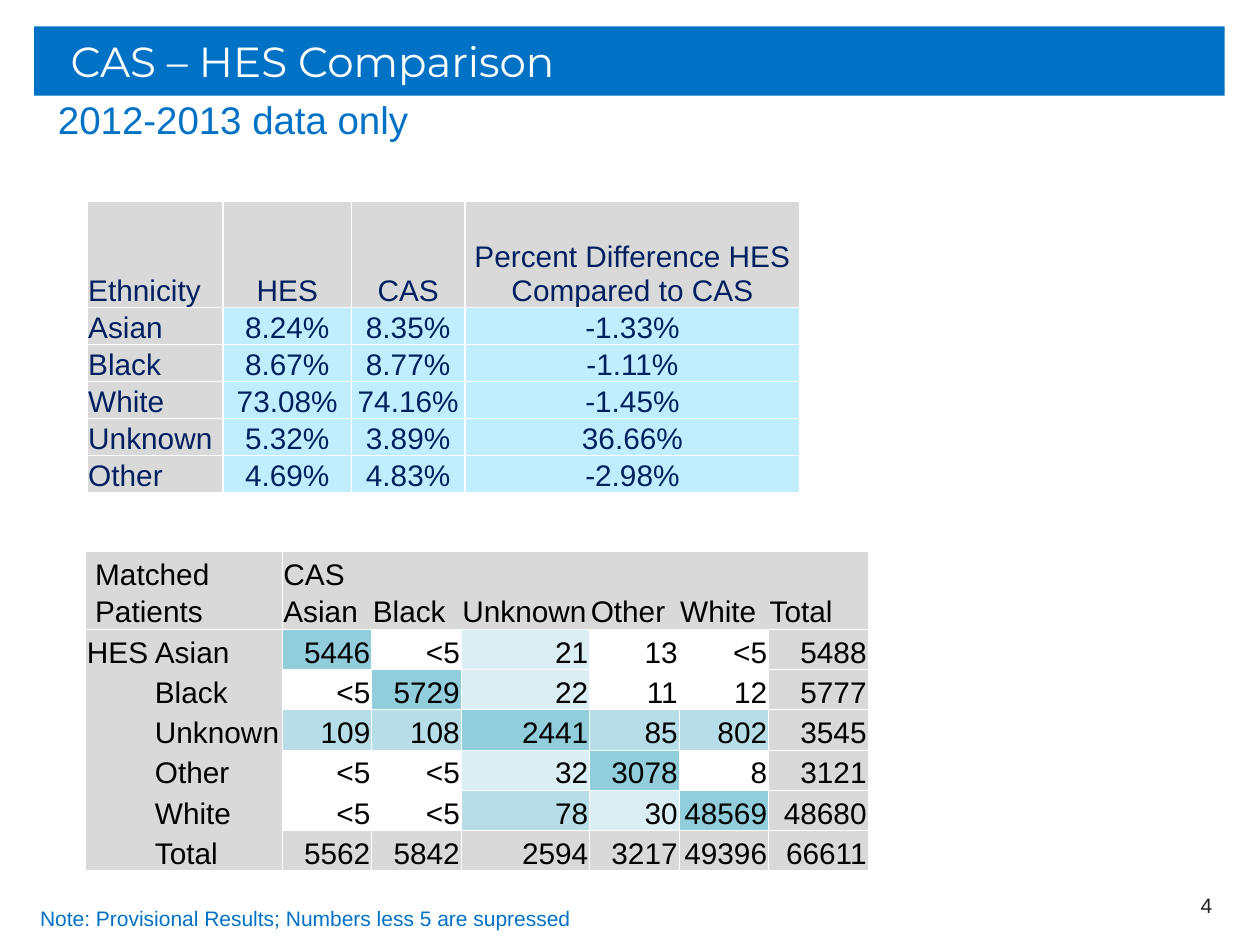
from lxml import etree
from pptx import Presentation
from pptx import util as u
from pptx.dml.color import RGBColor
from pptx.enum import text
from pptx.oxml.ns import qn

Inches, Pt = u.Inches, u.Pt
ALIGN, ANCHOR = text.PP_ALIGN, text.MSO_ANCHOR
COLORS = {
    "blue": "0072C6", "navy": "002060", "white": "FFFFFF", "black": "000000",
    "number": "202020", "grey": "D9D9D9", "sky": "C1EEFF",
    "match": "92CDDC", "medium": "B7DEE8", "light": "DAEEF3",
}


def format_text(frame, size, color, align=ALIGN.LEFT, font="Arial"):
    paragraph = frame.paragraphs[0]
    paragraph.alignment = align
    for run in paragraph.runs:
        run.font.size = Pt(size)
        run.font.name = font
        run.font.color.rgb = RGBColor.from_string(COLORS[color])
    if not paragraph.runs:
        etree.SubElement(paragraph._p, qn("a:endParaRPr"), sz=str(size * 100))


def format_cell(cell, fill, color, align, sides, width):
    """Style one cell; sides names the edges (L, R, T, B) that get a white line."""
    cell.margin_left = cell.margin_right = cell.margin_top = Inches(0.01)
    cell.margin_bottom = 0
    cell.vertical_anchor = ANCHOR.BOTTOM
    format_text(cell.text_frame, 17, color, align)
    if fill:
        cell.fill.solid()
        cell.fill.fore_color.rgb = RGBColor.from_string(COLORS[fill])
    else:
        cell.fill.background()
    properties = cell._tc.get_or_add_tcPr()
    for position, side in enumerate("LRTB"):
        line = etree.Element(qn(f"a:ln{side}"), w=str(Pt(width)))
        if side in sides:
            solid = etree.SubElement(line, qn("a:solidFill"))
            etree.SubElement(solid, qn("a:srgbClr"), val=COLORS["white"])
        else:
            etree.SubElement(line, qn("a:noFill"))
        properties.insert(position, line)


prs = Presentation()
prs.slide_width, prs.slide_height = Inches(10), Inches(7.5)
slide = prs.slides.add_slide(prs.slide_layouts[5])

# Title bar
title = slide.shapes.title
title.left, title.top = Inches(0.27), Inches(0.21)
title.width, title.height = Inches(9.45), Inches(0.55)
title.fill.solid()
title.fill.fore_color.rgb = RGBColor.from_string(COLORS["blue"])
title.text_frame.text = "CAS – HES Comparison"
title.text_frame.vertical_anchor = ANCHOR.MIDDLE
title.text_frame.margin_left = Inches(0.29)
format_text(title.text_frame, 24, "white", font="Montserrat")

# Subtitle, page number and note
captions = [
    ("2012-2013 data only", 0.27, 0.76, 9.45, 0.47, 22, "blue", ALIGN.LEFT),
    ("4", 7.39, 6.98, 2.33, 0.4, 12, "number", ALIGN.RIGHT),
    ("Note: Provisional Results; Numbers less 5 are supressed",
     0.22, 7.14, 7.18, 0.3, 12, "blue", ALIGN.LEFT),
]
frames = []
for words, left, top, width, height, size, color, align in captions:
    box = slide.shapes.add_textbox(Inches(left), Inches(top), Inches(width), Inches(height))
    box.text_frame.word_wrap = True
    box.text_frame.text = words
    format_text(box.text_frame, size, color, align)
    frames.append(box.text_frame)
subtitle, page_number, note = frames
subtitle.margin_left = Inches(0.19)
subtitle.margin_top = subtitle.margin_right = subtitle.margin_bottom = 0
page_number.vertical_anchor = ANCHOR.MIDDLE

# Share of each ethnicity in the two sources
shares = [
    ["Ethnicity", "HES", "CAS", "Percent Difference HES Compared to CAS"],
    ["Asian", "8.24%", "8.35%", "-1.33%"],
    ["Black", "8.67%", "8.77%", "-1.11%"],
    ["White", "73.08%", "74.16%", "-1.45%"],
    ["Unknown", "5.32%", "3.89%", "36.66%"],
    ["Other", "4.69%", "4.83%", "-2.98%"],
]
# Matched patients, HES in rows and CAS in columns
matches = [
    [" Matched", "", "CAS", "", "", "", "", ""],
    [" Patients", "", "Asian", "Black", "Unknown", "Other", "White", "Total"],
    ["HES", "Asian", "5446", "<5", "21", "13", "<5", "5488"],
    ["", "Black", "<5", "5729", "22", "11", "12", "5777"],
    ["", "Unknown", "109", "108", "2441", "85", "802", "3545"],
    ["", "Other", "<5", "<5", "32", "3078", "8", "3121"],
    ["", "White", "<5", "<5", "78", "30", "48569", "48680"],
    ["", "Total", "5562", "5842", "2594", "3217", "49396", "66611"],
]
share_widths, share_heights = [1.08, 1.02, 0.9, 2.66], [0.84] + [0.29] * 5
match_widths = [0.54, 1.02, 0.71, 0.71, 1.02, 0.71, 0.71, 0.79]
match_heights = [0.32, 0.29] + [0.32] * 6

tables = []
for rows, left, top, widths, heights in [
    (shares, 0.69, 1.6, share_widths, share_heights),
    (matches, 0.68, 4.38, match_widths, match_heights),
]:
    table = slide.shapes.add_table(
        len(rows), len(widths), Inches(left), Inches(top),
        Inches(sum(widths)), Inches(sum(heights))).table
    table.first_row = table.horz_banding = False
    for column, width in zip(table.columns, widths):
        column.width = Inches(width)
    for row, height in zip(table.rows, heights):
        row.height = Inches(height)
    for r, values in enumerate(rows):
        for c, value in enumerate(values):
            table.cell(r, c).text_frame.text = value
    tables.append(table)
share_table, match_table = tables

for r in range(len(shares)):
    for c in range(len(share_widths)):
        fill = "grey" if r == 0 or c == 0 else "sky"
        align = ALIGN.CENTER if c else ALIGN.LEFT
        format_cell(share_table.cell(r, c), fill, "navy", align, "LRTB", 1)

# Shading of the matches: G grey, D match, M medium, L light, - none
SHADES = {"G": "grey", "D": "match", "M": "medium", "L": "light", "-": None}
shading = ["GGGGGGGG", "GGGGGGGG", "GGD-L--G", "GG-DL--G",
           "GGMMDMMG", "GG--LD-G", "GG--MLDG", "GGGGGGGG"]
for r, codes in enumerate(shading):
    for c, code in enumerate(codes):
        is_count = r > 1 and c > 1
        # Headings are ruled only around their block
        edges = {"L": c in (0, 2), "R": c in (1, 7), "T": r in (0, 2), "B": r in (1, 7)}
        sides = [side for side, on_edge in edges.items() if is_count or on_edge]
        align = ALIGN.RIGHT if is_count else ALIGN.LEFT
        format_cell(match_table.cell(r, c), SHADES[code], "black", align, sides, 0.5)
for r in range(2):
    match_table.cell(r, 0).merge(match_table.cell(r, 1))

prs.save("out.pptx")
